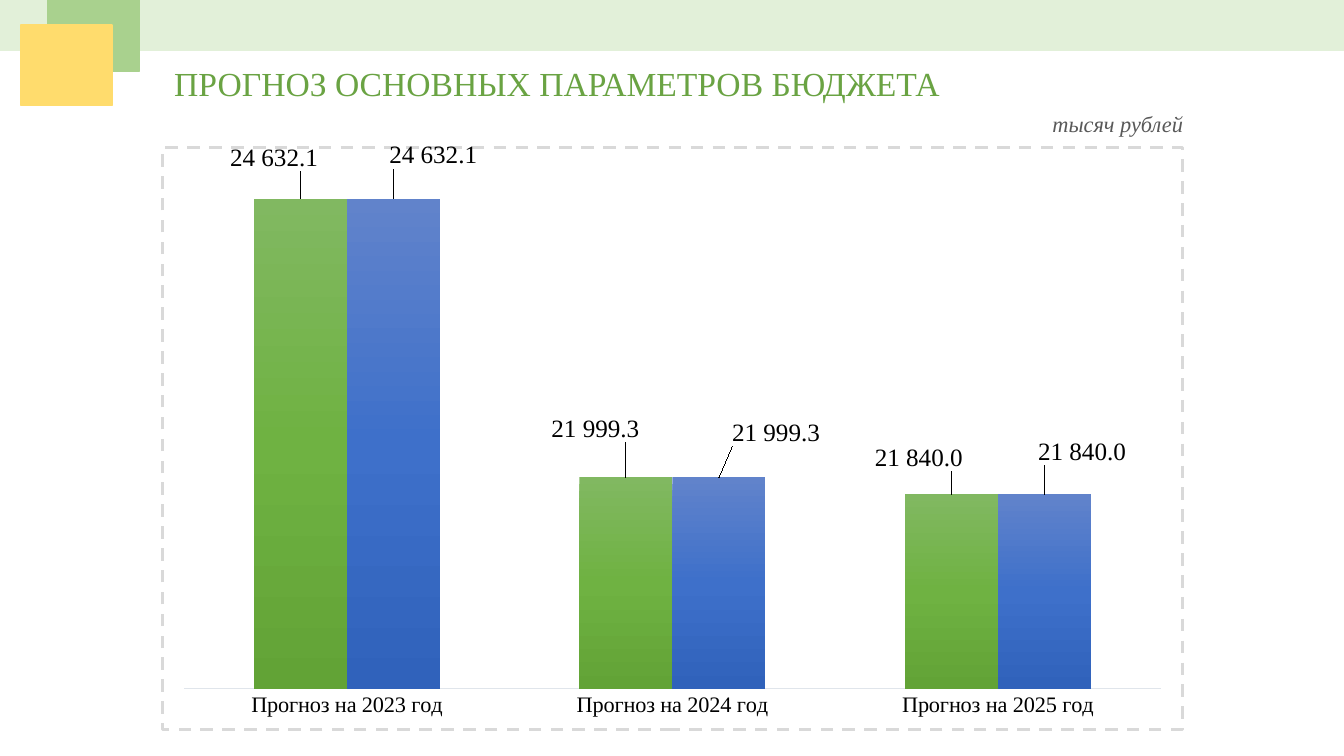
from lxml import etree
from pptx import Presentation, util as u
from pptx.chart.data import CategoryChartData
from pptx.dml.color import RGBColor
from pptx.enum import chart as ch, shapes, text
from pptx.oxml import parse_xml
from pptx.oxml.ns import nsdecls

WIDE, HIGH = 13.33, 7.5
SERIF = "Times New Roman"
BLACK = RGBColor(0, 0, 0)
TITLE = RGBColor(0x6A, 0xA3, 0x43)
GRAY = RGBColor(0x59, 0x59, 0x59)
PALE = RGBColor(0xE2, 0xF0, 0xD9)
GREEN = RGBColor(0xA9, 0xD1, 0x8E)
GOLD = RGBColor(0xFF, 0xDC, 0x6D)
AXIS = RGBColor(0xE0, 0xE5, 0xEB)
EDGE = RGBColor(0xD9, 0xD9, 0xD9)
FORMAT = r"#\ ##0.0"
YEARS = (2023, 2024, 2025)
SUMS = (24632.1, 21999.3, 21840.0)
SERIES = (
    ("Series 1", ("81B861", "6FB242", "62A336"),
     ((-0.026, -0.04), (-0.03, -0.053), (-0.032, -0.032))),
    ("Series 2", ("6183CB", "3E70CA", "3062BB"),
     ((0.039, -0.044), (0.056, -0.046), (0.037, -0.042))),
)


def style(font, color, **values):
    """Set the colour and the given values on a font."""
    font.color.rgb = color
    for key, value in values.items():
        setattr(font, key, value)


def layout(**parts):
    """Return a manual chart layout with the given parts."""
    body = "".join(f'<c:{key} val="{value}"/>' for key, value in parts.items())
    return parse_xml(f'<c:layout {nsdecls("c")}><c:manualLayout>{body}'
                     '</c:manualLayout></c:layout>')


def label(slide, box, words, color, align, **values):
    """Place one unwrapped line of text in the box."""
    frame = slide.shapes.add_textbox(*map(u.Inches, box)).text_frame
    frame.word_wrap = False
    frame.auto_size = text.MSO_AUTO_SIZE.SHAPE_TO_FIT_TEXT
    line = frame.paragraphs[0]
    line.alignment = align
    run = line.add_run()
    run.text = words
    style(run.font, color, name=SERIF, **values)


def header(slide, box):
    """Draw the band and its two overlapping tiles in the box."""
    left, top, width, height = box
    tiles = (
        (0, 0, width, height, PALE),
        (0.47, 0, 0.91, 0.71, GREEN),
        (0.21, 0.25, 0.9, 0.8, GOLD),
    )
    for x, y, w, h, color in tiles:
        tile = slide.shapes.add_shape(
            shapes.MSO_SHAPE.RECTANGLE,
            *map(u.Inches, (left + x, top + y, w, h)))
        tile.shadow.inherit = False
        tile.fill.solid()
        tile.fill.fore_color.rgb = color
        tile.line.color.rgb = color
        tile.line.width = u.Pt(1)


def paint(series, colors):
    """Fill the series with an even downward gradient."""
    step = 100000 // (len(colors) - 1)
    stops = "".join(f'<a:gs pos="{i * step}"><a:srgbClr val="{color}"/></a:gs>'
                    for i, color in enumerate(colors))
    series.format.line.fill.background()
    series._element.get_or_add_spPr().insert(0, parse_xml(
        f'<a:gradFill {nsdecls("a")}><a:gsLst>{stops}</a:gsLst>'
        '<a:lin ang="5400000" scaled="0"/></a:gradFill>'))


def mark(series, shifts):
    """Show values above the bars, each moved by its shift."""
    labels = series.data_labels
    labels.show_value = True
    labels.number_format = FORMAT
    labels.number_format_is_linked = False
    labels.position = ch.XL_LABEL_POSITION.OUTSIDE_END
    style(labels.font, BLACK, name=SERIF, size=u.Pt(18))
    for i, (x, y) in enumerate(shifts):
        point = series.points[i].data_label
        style(point.font, BLACK, name=SERIF, size=u.Pt(18))
        point.position = ch.XL_LABEL_POSITION.OUTSIDE_END
        node = labels._element.findall("c:dLbl", labels._element.nsmap)[i]
        node.insert(1, layout(x=x, y=y))
        form = etree.Element(node[0].tag.replace("idx", "numFmt"),
                             formatCode=FORMAT, sourceLinked="0")
        node.insert(2, form)


def frame(chart):
    """Draw a dashed border round the chart."""
    chart._chartSpace.chart.addnext(parse_xml(
        f'<c:spPr {nsdecls("c", "a")}><a:noFill/><a:ln w="{u.Pt(2.25)}">'
        f'<a:solidFill><a:srgbClr val="{EDGE}"/></a:solidFill>'
        '<a:prstDash val="dash"/></a:ln></c:spPr>'))


def budget(slide, box):
    """Place the budget column chart in the box."""
    data = CategoryChartData(number_format=FORMAT)
    data.categories = [f"Прогноз на {year} год" for year in YEARS]
    for name, _, _ in SERIES:
        data.add_series(name, SUMS)
    chart = slide.shapes.add_chart(
        ch.XL_CHART_TYPE.COLUMN_CLUSTERED, *map(u.Inches, box), data).chart
    chart.has_legend = chart.has_title = False
    style(chart.font, BLACK, name="Calibri", size=u.Pt(10))
    frame(chart)
    plot = chart.plots[0]
    plot.gap_width, plot.overlap, plot.vary_by_categories = 150, 0, False
    for series, (_, colors, shifts) in zip(plot.series, SERIES):
        paint(series, colors)
        mark(series, shifts)
    years, sums = chart.category_axis, chart.value_axis
    years.major_tick_mark = ch.XL_TICK_MARK.NONE
    style(years.tick_labels.font, BLACK, name=SERIF, size=u.Pt(16))
    years.format.line.color.rgb = AXIS
    years.format.line.width = u.Pt(0.75)
    values = {"visible": False, "has_major_gridlines": False,
              "minimum_scale": 20000, "maximum_scale": 25000}
    for key, value in values.items():
        setattr(sums, key, value)
    area = chart._chartSpace.chart.plotArea
    for old in area.findall("c:layout", area.nsmap):
        area.remove(old)
    area.insert(0, layout(layoutTarget="inner", xMode="edge", yMode="edge",
                          x=0.021, y=0.021, w=0.958, h=0.91))


def main():
    """Build and save the slide."""
    deck = Presentation()
    deck.slide_width, deck.slide_height = u.Inches(WIDE), u.Inches(HIGH)
    slide = deck.slides.add_slide(deck.slide_layouts[6])
    label(slide, (1.63, 0.58, 7.87, 0.5), "ПРОГНОЗ ОСНОВНЫХ ПАРАМЕТРОВ БЮДЖЕТА",
          TITLE, text.PP_ALIGN.LEFT, size=u.Pt(24))
    header(slide, (0, 0, WIDE, HIGH / 15))
    budget(slide, (1.6, 1.41, 10.14, 5.84))
    label(slide, (10.34, 1.04, 1.52, 0.37), "тысяч рублей",
          GRAY, text.PP_ALIGN.LEFT, size=u.Pt(16), italic=True)
    deck.save("out.pptx")


if __name__ == "__main__":
    main()
